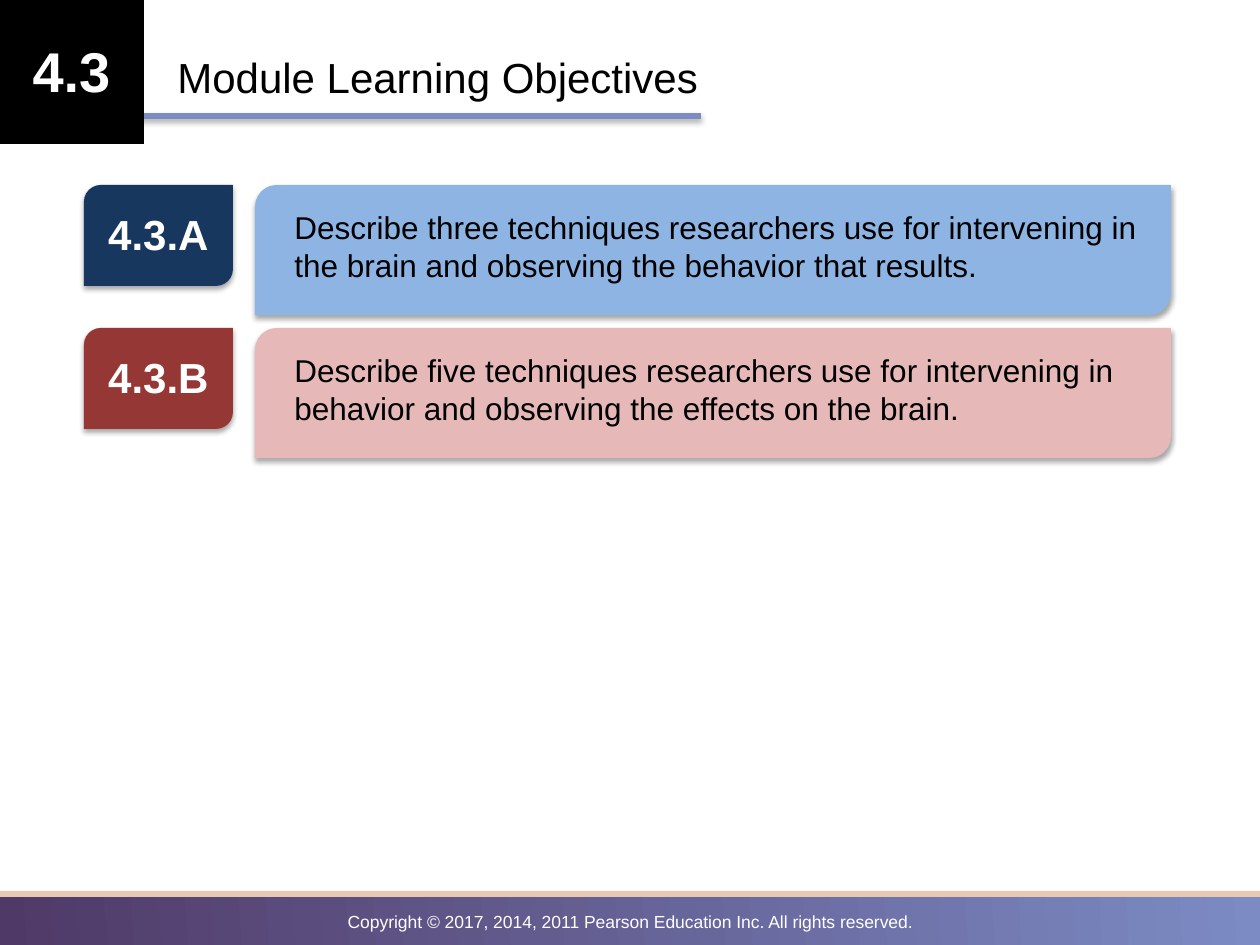
"""Build the Module 4.3 learning objectives slide."""
from lxml import etree
from pptx import Presentation
from pptx.dml.color import RGBColor
from pptx.enum.shapes import MSO_SHAPE
from pptx.enum.text import MSO_AUTO_SIZE, PP_ALIGN
from pptx.oxml.ns import qn
from pptx.util import Emu, Pt

RECTANGLE = MSO_SHAPE.RECTANGLE
ROUNDED = MSO_SHAPE.ROUND_2_DIAG_RECTANGLE
LEFT, CENTER = PP_ALIGN.LEFT, PP_ALIGN.CENTER
FIT_SHAPE = MSO_AUTO_SIZE.SHAPE_TO_FIT_TEXT
SCALE = 914400 / 126
COLORS = {
    "black": "000000", "white": "FFFFFF", "plum": "4F3967", "periwinkle": "7C8BC4",
    "sand": "E7C8B3", "navy": "17375E", "sky": "8EB4E3", "brick": "953735", "rose": "E6B9B8",
}
SHADOW = {"blurRad": Pt(3.1), "dist": Pt(1.8), "dir": 5400000, "rotWithShape": 0}


def add_block(kind, box, color, shadow=False):
    shape = slide.shapes.add_shape(kind, *[Emu(round(px * SCALE)) for px in box])
    shape.fill.solid()
    shape.fill.fore_color.rgb = RGBColor.from_string(COLORS[color])
    shape.line.fill.background()
    shape.shadow.inherit = False
    if shadow:
        effects = shape.element.spPr.find(qn("a:effectLst"))
        outer = etree.SubElement(effects, qn("a:outerShdw"))
        for name, value in SHADOW.items():
            outer.set(name, str(int(value)))
        black = etree.SubElement(outer, qn("a:srgbClr"), val=COLORS["black"])
        etree.SubElement(black, qn("a:alpha"), val="35000")
    return shape


def add_text(box, text, size, color, alignment=LEFT, bold=False):
    shape = slide.shapes.add_textbox(*[Emu(round(px * SCALE)) for px in box])
    shape.text_frame.word_wrap = True
    shape.text_frame.auto_size = FIT_SHAPE
    paragraph = shape.text_frame.paragraphs[0]
    paragraph.text = text
    paragraph.alignment = alignment
    for name, value in {"name": "Arial", "size": Pt(size), "bold": bold}.items():
        setattr(paragraph.font, name, value)
    paragraph.font.color.rgb = RGBColor.from_string(COLORS[color])


presentation = Presentation()
presentation.slide_width = Emu(round(1260 * SCALE))
presentation.slide_height = Emu(round(945 * SCALE))
slide = presentation.slides.add_slide(presentation.slide_layouts[6])

footer = add_block(RECTANGLE, (0, 892, 1260, 57), "plum")
footer.fill.gradient()
footer.fill.gradient_angle = 4
for stop, position, color in zip(footer.fill.gradient_stops, (0, 1), ("plum", "periwinkle")):
    stop.position = position
    stop.color.rgb = RGBColor.from_string(COLORS[color])
add_block(RECTANGLE, (0, 891, 1266, 6), "sand")
add_text((0, 905, 1260, 34), "Copyright © 2017, 2014, 2011 Pearson Education Inc. All rights reserved.",
         10, "white", CENTER)

add_block(RECTANGLE, (-25, 113, 726, 6), "periwinkle", shadow=True)
add_block(RECTANGLE, (-1, -1, 145, 145), "black")
add_text((-1, 30, 145, 81), "4.3", 32, "white", CENTER, True)
add_text((165, 45, 971, 63), "Module Learning Objectives", 24, "black")

objectives = [
    ("4.3.A", "navy", "sky", "Describe three techniques researchers use for intervening in "
     "the brain and observing the behavior that results."),
    ("4.3.B", "brick", "rose", "Describe five techniques researchers use for intervening in "
     "behavior and observing the effects on the brain."),
]
for index, (label, label_color, panel_color, objective) in enumerate(objectives):
    top = 185 + index * 143
    add_block(ROUNDED, (84, top, 149, 101), label_color, shadow=True)
    add_text((84, top + 17, 149, 63), label, 24, "white", CENTER, True)
    add_block(ROUNDED, (255, top, 916, 130), panel_color, shadow=True)
    add_text((282, top + 17, 881, 89), objective, 18, "black")

presentation.save("out.pptx")
